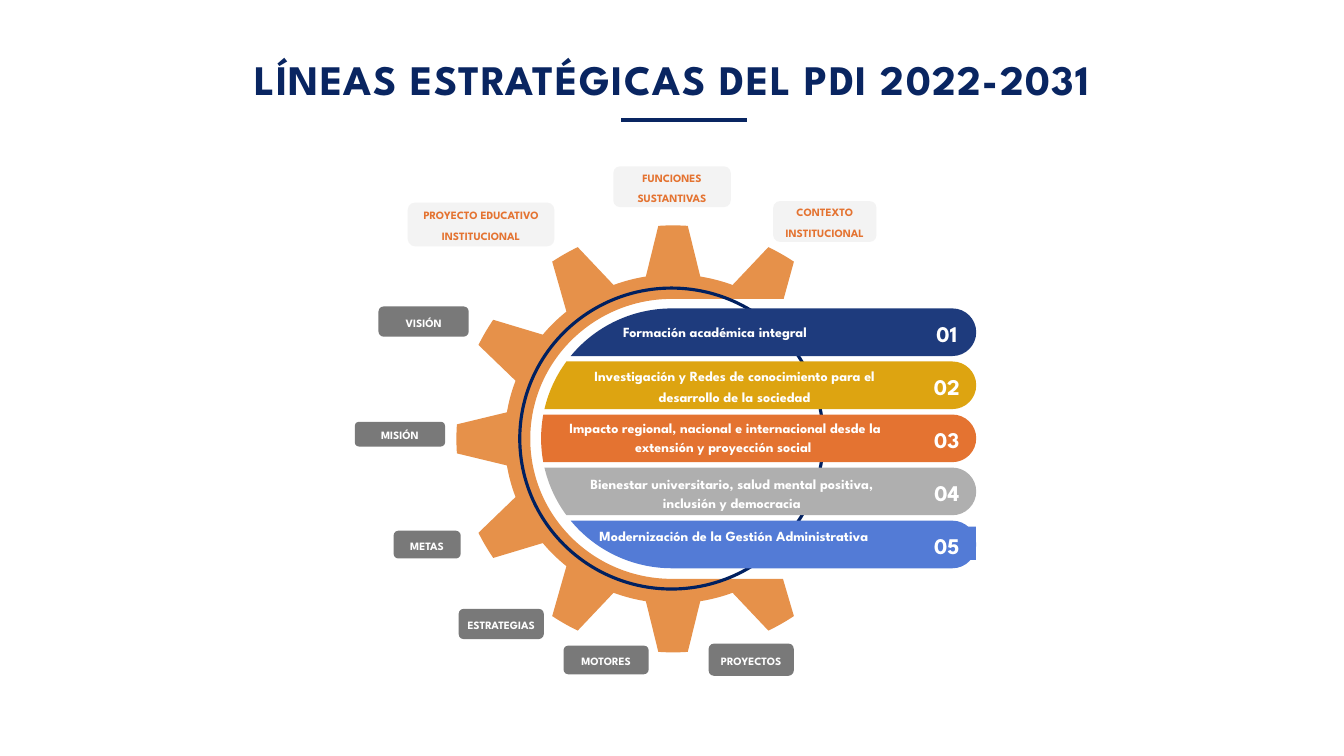
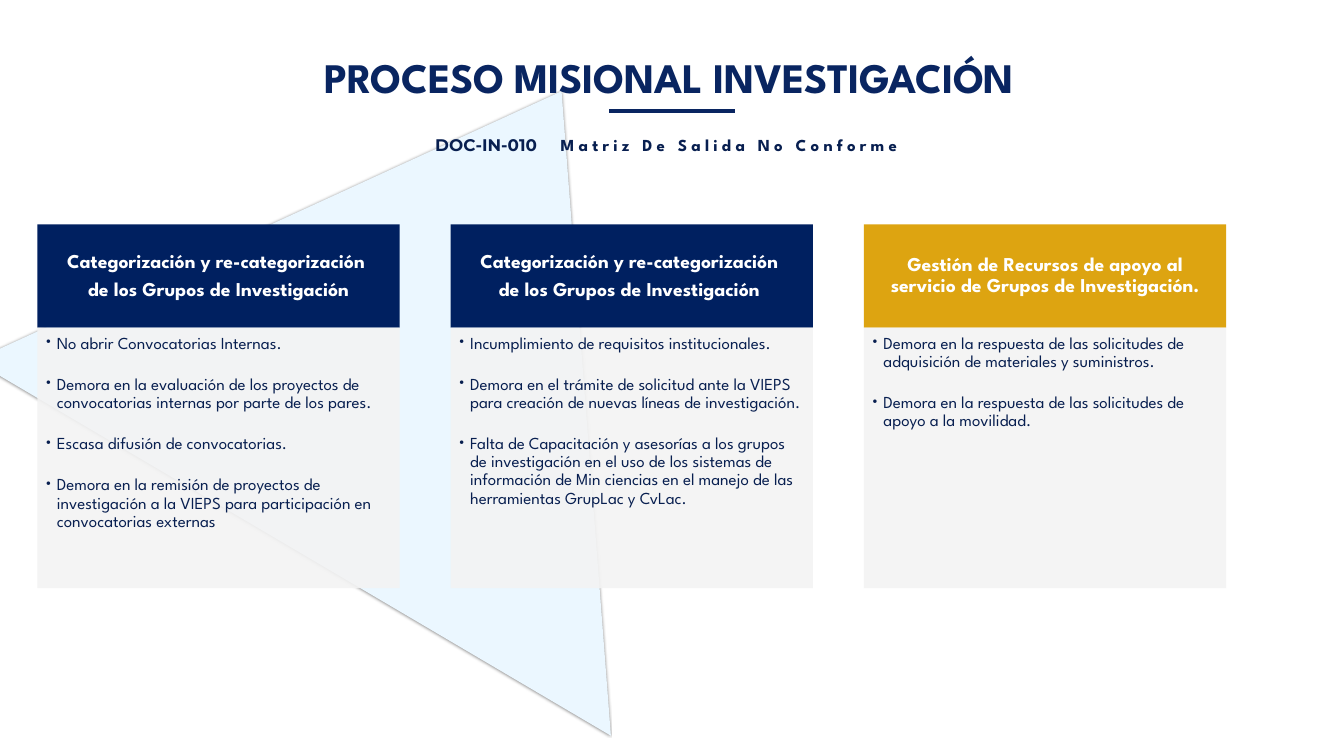
from math import acos, cos, degrees, radians, sin, tan

from lxml import etree
from pptx import Presentation
from pptx.dml.color import RGBColor
from pptx.enum import shapes, text
from pptx.oxml import ns
from pptx.util import Pt

NAVY = RGBColor(0x00, 0x20, 0x60)
TITLE_BLUE = RGBColor(0x09, 0x25, 0x61)
TEXT_BLUE = RGBColor(0x08, 0x1F, 0x50)
DEEP_BLUE = RGBColor(0x1E, 0x3B, 0x7D)
SOFT_BLUE = RGBColor(0x53, 0x7B, 0xD6)
ICE_BLUE = RGBColor(0xEB, 0xF7, 0xFF)
GOLD = RGBColor(0xDD, 0xA4, 0x11)
ORANGE = RGBColor(0xE4, 0x73, 0x31)
GEAR_ORANGE = RGBColor(0xE6, 0x91, 0x4A)
SILVER = RGBColor(0xAF, 0xAF, 0xAF)
GREY = RGBColor(0x79, 0x79, 0x79)
PALE_GREY = RGBColor(0xF3, 0xF3, 0xF3)
OFF_WHITE = RGBColor(0xFE, 0xFE, 0xFE)
WHITE = RGBColor(0xFF, 0xFF, 0xFF)

FONT = "League Spartan"
CODE_FONT = "Montserrat"
CENTER = text.PP_ALIGN.CENTER
TOP, MIDDLE = text.MSO_ANCHOR.TOP, text.MSO_ANCHOR.MIDDLE
SHAPE = shapes.MSO_SHAPE

# Strategic lines: color, caption paragraphs, caption left, offset from bar top, width, height
STRATEGIC_LINES = [
    (DEEP_BLUE, ["Formación académica integral"], 841, 10, 361, 42),
    (GOLD, ["Investigación y Redes de conocimiento para el",
            " desarrollo de la sociedad "], 773, -2, 553, 74),
    (ORANGE, ["Impacto regional, nacional e internacional desde la extensión "
              "y proyección social "], 777, -3.5, 518, 69),
    (SILVER, ["Bienestar universitario, salud mental positiva, inclusión y "
              "democracia"], 798, 0.5, 495, 69),
    (SOFT_BLUE, ["Modernización de la Gestión Administrativa"], 828, -2, 441, 69),
]
CONTEXT_TAGS = [
    ("PROYECTO EDUCATIVO INSTITUCIONAL", (582.5, 289.4, 209.5, 62.6)),
    ("FUNCIONES SUSTANTIVAS", (876.2, 237.6, 167.8, 58.3)),
    ("CONTEXTO INSTITUCIONAL", (1104.5, 287.3, 147.6, 58.3)),
]
PLAN_TAGS = [
    ("VISIÓN", (540.7, 437.8, 128.9, 43.2)),
    ("MISIÓN", (506.9, 602.6, 128.9, 35.3)),
    ("METAS", (562.3, 758.2, 95.8, 39.6)),
    ("ESTRATEGIAS", (655.2, 869.8, 121.7, 43.2)),
    ("MOTORES", (805, 922.3, 121.7, 41)),
    ("PROYECTOS", (1012.3, 919.4, 121.7, 46.1)),
]
NONCONFORMITIES = [
    (NAVY, ["Categorización y re-categorización ", "de los Grupos de Investigación"], [
        "No abrir Convocatorias Internas.",
        "Demora en la evaluación de los proyectos de convocatorias internas por parte "
        "de los pares.",
        "Escasa difusión de convocatorias.",
        "Demora en la remisión de proyectos de investigación a la VIEPS para "
        "participación en convocatorias externas",
    ]),
    (NAVY, ["Categorización y re-categorización ", "de los Grupos de Investigación "], [
        "Incumplimiento de requisitos institucionales.",
        "Demora en el trámite de solicitud ante la VIEPS para creación de nuevas líneas "
        "de investigación.",
        "Falta de Capacitación y asesorías a los grupos de investigación en el uso de "
        "los sistemas de información de Min ciencias en el manejo de las herramientas "
        "GrupLac y CvLac.",
    ]),
    (GOLD, ["Gestión de Recursos de apoyo al servicio de Grupos de Investigación."], [
        "Demora en la respuesta de las solicitudes de adquisición de materiales y "
        "suministros.",
        "Demora en la respuesta de las solicitudes de apoyo a la movilidad.",
    ]),
]


def points(values):
    return [Pt(value) for value in values]


def paint(shape, color):
    shape.shadow.inherit = False
    shape.fill.solid()
    shape.fill.fore_color.rgb = color
    shape.line.fill.background()
    return shape


def add_box(slide, kind, box, color):
    return paint(slide.shapes.add_shape(kind, *points(box)), color)


def set_frame(shape, insets=(7.2, 3.6, 7.2, 3.6), anchor=TOP, wrap=True):
    frame = shape.text_frame
    frame.auto_size = text.MSO_AUTO_SIZE.NONE
    frame.word_wrap = wrap
    frame.vertical_anchor = anchor
    (frame.margin_left, frame.margin_top,
     frame.margin_right, frame.margin_bottom) = points(insets)
    return frame


def add_run(paragraph, words, size, color, bold=True, font=FONT, spacing=0):
    run = paragraph.add_run()
    run.text = words
    run.font.name, run.font.size, run.font.bold = font, Pt(size), bold
    run.font.color.rgb = color
    if spacing:
        run._r.get_or_add_rPr().set("spc", str(round(spacing * 100)))


def write(frame, lines, size, color, bold=True, align=CENTER, leading=None,
          gap=0, bullet=None):
    """Fill a frame with paragraphs kept gap points apart."""
    for index, words in enumerate(lines):
        paragraph = frame.add_paragraph() if index else frame.paragraphs[0]
        paragraph.alignment = align
        paragraph.line_spacing = leading
        if index:
            paragraph.space_before = Pt(gap)
        if bullet:
            properties = paragraph._p.get_or_add_pPr()
            properties.set("marL", str(Pt(18)))
            properties.set("indent", str(Pt(-18)))
            etree.SubElement(properties, ns.qn("a:buFont")).set("typeface", FONT)
            etree.SubElement(properties, ns.qn("a:buChar")).set("char", bullet)
            paragraph.font.size = Pt(size)
        add_run(paragraph, words, size, color, bold)


def arc(center, radii, start, end, pieces=1):
    """Start point and Bézier curves on an ellipse, clockwise from twelve o'clock."""
    (x, y), (rx, ry) = center, radii
    step = radians(end - start) / pieces
    pull = 4 / 3 * tan(step / 4)

    def along(angle, shift=0):
        return (x + rx * (sin(angle) + shift * cos(angle)),
                y - ry * (cos(angle) - shift * sin(angle)))

    nodes = [radians(start) + step * i for i in range(pieces + 1)]
    curves = [[along(a, pull), along(b, -pull), along(b)]
              for a, b in zip(nodes, nodes[1:])]
    return [[along(nodes[0])]] + curves


def add_outline(slide, outline, color):
    """Draw steps of one point (line) or three points (curve)."""
    first, *rest = [points(point) for step in outline for point in step]
    builder = slide.shapes.build_freeform(*first)
    builder.add_line_segments(rest, close=True)
    shape = paint(builder.convert_to_shape(), color)
    segments = iter(shape._element.findall(".//" + ns.qn("a:lnTo")))
    for step in outline[1:]:
        line, *others = [next(segments) for _ in step]
        if others:
            line.tag = ns.qn("a:cubicBezTo")
            for other in others:
                line.append(other[0])
                other.getparent().remove(other)


def add_title(slide, words, box, rule, spacing, leading=None):
    title = slide.shapes.title
    title.left, title.top, title.width, title.height = points(box)
    paragraph = set_frame(title, wrap=False).paragraphs[0]
    paragraph.alignment = CENTER
    paragraph.line_spacing = leading
    add_run(paragraph, words, 60, TITLE_BLUE, spacing=spacing)
    left, y, width = rule
    underline = slide.shapes.add_connector(
        shapes.MSO_CONNECTOR.STRAIGHT, *points((left, y, left + width, y)))
    underline.line.color.rgb = TITLE_BLUE
    underline.line.width = Pt(6)
    etree.SubElement(underline._element.spPr, ns.qn("a:effectLst"))


def add_gear(slide, x, y):
    center, tip, root = (x, y), (309.5, 305), (240.5, 235)
    tip_half, root_half = 3.9, 9.3
    outline = []
    for tooth in range(150, 391, 30):
        outline += arc(center, tip, tooth - tip_half, tooth + tip_half)
        if tooth < 390:
            outline += arc(center, root, tooth + root_half, tooth + 30 - root_half)
    outline.append([(x + 158, y - 200)])
    outline += arc((x - 1.5, y), (202.5, 200), 360, 180, 2)
    outline.append([(x + 157, y + 200)])
    add_outline(slide, outline, GEAR_ORANGE)

    ring = slide.shapes.add_shape(SHAPE.OVAL, *points((x - 219, y - 215.5, 433.5, 430)))
    ring.shadow.inherit = False
    ring.fill.background()
    ring.line.color.rgb = NAVY
    ring.line.width = Pt(4.5)


def add_strategic_bars(slide, center, right):
    """Stack the bars so their left ends follow one ellipse around center."""
    x, y = center
    rx, ry, height, pitch = 187, 185.6, 68, 75.8
    cap = height / 2
    for index, (color, caption, left, offset, width, depth) in enumerate(STRATEGIC_LINES):
        top = y - ry + index * pitch
        low, high = [360 - degrees(acos(max(-1, min(1, (y - level) / ry))))
                     for level in (top + height, top)]
        outline = arc((right - cap, top + cap), (cap, cap), 0, 180, 2)
        outline += arc(center, (rx, ry), low, high)
        add_outline(slide, outline, color)

        number = slide.shapes.add_textbox(*points((right - 83.5, top + 8.5, 83, 47.5)))
        if index == len(STRATEGIC_LINES) - 1:
            paint(number, color)
        write(set_frame(number, (0, 3.6, 0, 3.6), MIDDLE), [f"{index + 1:02}"],
              32, WHITE, leading=1.2)

        label = slide.shapes.add_textbox(*points((left, top + offset, width, depth)))
        write(set_frame(label, (17, 8.6, 17, 8.6)), caption, 20, WHITE,
              leading=Pt(26.5), gap=3.5)


def add_tags(slide, tags, fill, color):
    for words, box in tags:
        tag = add_box(slide, SHAPE.ROUNDED_RECTANGLE, box, fill)
        write(set_frame(tag, (1.4, 1.4, 1.4, 8), MIDDLE), [words], 16, color, leading=1.5)


def add_backdrop(slide, box):
    triangle = add_box(slide, SHAPE.ISOSCELES_TRIANGLE, box, ICE_BLUE)
    triangle.adjustments[0] = 0.5
    triangle.rotation = 30.5
    effects = triangle._element.spPr.find(ns.qn("a:effectLst"))
    shadow = etree.SubElement(effects, ns.qn("a:outerShdw"), blurRad=str(Pt(1)),
                              dist=str(Pt(1)), dir="5400000", rotWithShape="0")
    black = etree.SubElement(shadow, ns.qn("a:srgbClr"), val="000000")
    etree.SubElement(black, ns.qn("a:alpha"), val="50000")
    slide.shapes.element.insert(2, triangle._element)


def add_subtitle(slide, box):
    subtitle = slide.shapes.add_textbox(*points(box))
    paragraph = set_frame(subtitle, anchor=MIDDLE, wrap=False).paragraphs[0]
    paragraph.alignment = CENTER
    paragraph.line_spacing = 1.2
    add_run(paragraph, "DOC-IN-010", 24, TEXT_BLUE, font=CODE_FONT)
    add_run(paragraph, " ", 24, TEXT_BLUE, font=CODE_FONT, spacing=27)
    add_run(paragraph, "Matriz De Salida No Conforme", 24, TEXT_BLUE, spacing=6)


def add_nonconformity_columns(slide, left, top):
    width, pitch, heading_height, body_height = 517.7, 590.4, 147.6, 372.2
    for index, (color, heading, items) in enumerate(NONCONFORMITIES):
        x = left + index * pitch
        header = add_box(slide, SHAPE.RECTANGLE, (x, top, width, heading_height), color)
        write(set_frame(header, (15.8, 8.6, 15.8, 8.6), MIDDLE), heading, 28, WHITE,
              leading=0.9, gap=10)
        body = add_box(slide, SHAPE.RECTANGLE,
                       (x, top + heading_height, width, body_height), PALE_GREY)
        fill = body._element.spPr.find(ns.qn("a:solidFill"))
        etree.SubElement(fill[0], ns.qn("a:alpha"), val="90000")
        write(set_frame(body, (10, 10, 13.7, 15)), items, 24, TEXT_BLUE, bold=False,
              align=text.PP_ALIGN.LEFT, leading=0.9, gap=33, bullet="•")


def build_strategy_slide(slide):
    add_title(slide, "LÍNEAS ESTRATÉGICAS DEL PDI 2022-2031", (330, 74, 1261, 78),
              (887.8, 171.4, 179.3), spacing=2, leading=Pt(70.6))
    add_gear(slide, 961.5, 627)
    add_strategic_bars(slide, (960, 626.2), 1394.6)
    add_tags(slide, CONTEXT_TAGS, PALE_GREY, ORANGE)
    add_tags(slide, PLAN_TAGS, GREY, OFF_WHITE)


def build_research_slide(slide):
    add_backdrop(slide, (82, 78, 1056, 757.5))
    add_nonconformity_columns(slide, 53.3, 320.4)
    add_title(slide, "PROCESO MISIONAL INVESTIGACIÓN", (415, 70, 1083, 80),
              (870.5, 159, 180), spacing=-0.5)
    add_subtitle(slide, (610.5, 184, 682.5, 40))


def main():
    deck = Presentation()
    deck.slide_width, deck.slide_height = Pt(1920), Pt(1080)
    title_only = deck.slide_layouts[5]
    for build in (build_strategy_slide, build_research_slide):
        build(deck.slides.add_slide(title_only))
    deck.save("out.pptx")


if __name__ == "__main__":
    main()
